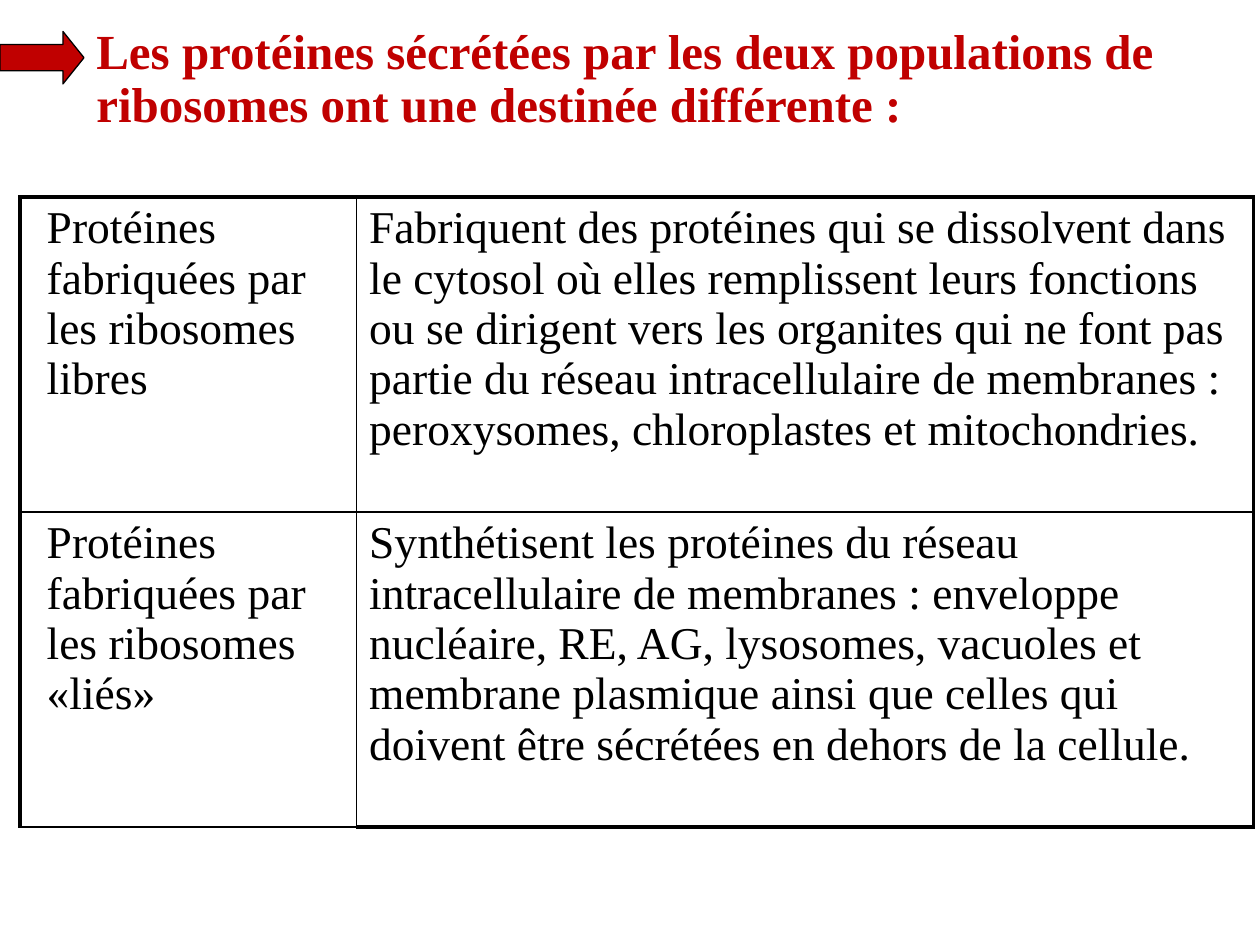
"""Build a slide comparing the fate of proteins made by free and bound ribosomes."""
from dataclasses import dataclass

from lxml import etree
from pptx import Presentation
from pptx import util as u
from pptx.dml.color import RGBColor
from pptx.enum import shapes, text
from pptx.oxml import ns


@dataclass(frozen=True)
class Theme:
    font: str = "Times New Roman"
    red: str = "C00000"
    black: str = "000000"
    title_size: float = 28
    body_size: float = 26
    thick: float = 2.25
    thin: float = 1


theme = Theme()


def add_run(paragraph, words, size, color, bold=False):
    run = paragraph.add_run()
    run.text = words
    run.font.name = theme.font
    run.font.size = u.Pt(size)
    run.font.bold = bold
    run.font.color.rgb = RGBColor.from_string(color)


def add_border(cell, side, width):
    properties = cell._tc.get_or_add_tcPr()
    line = etree.SubElement(properties, ns.qn(f"a:ln{side}"), w=str(u.Pt(width)))
    fill = etree.SubElement(line, ns.qn("a:solidFill"))
    etree.SubElement(fill, ns.qn("a:srgbClr"), val=theme.black)


presentation = Presentation()
presentation.slide_width, presentation.slide_height = u.Pt(720), u.Pt(540)
slide = presentation.slides.add_slide(presentation.slide_layouts[6])

arrow = slide.shapes.add_shape(
    shapes.MSO_SHAPE.RIGHT_ARROW, u.Pt(0), u.Pt(18), u.Pt(48), u.Pt(30))
arrow.adjustments[0], arrow.adjustments[1] = 0.5, 0.4
arrow.shadow.inherit = False
arrow.fill.solid()
arrow.fill.fore_color.rgb = RGBColor.from_string(theme.red)
arrow.line.color.rgb = RGBColor.from_string(theme.black)
arrow.line.width = u.Pt(0.75)

title = slide.shapes.add_textbox(u.Pt(48), u.Pt(12), u.Pt(630), u.Pt(68.4))
title.text_frame.word_wrap = True
title.text_frame.auto_size = text.MSO_AUTO_SIZE.SHAPE_TO_FIT_TEXT
paragraph = title.text_frame.paragraphs[0]
paragraph.line_spacing = 0.9
add_run(paragraph,
        "Les protéines sécrétées par les deux populations de ribosomes "
        "ont une destinée différente :",
        theme.title_size, theme.red, bold=True)

rows = [
    ("Protéines fabriquées par les ribosomes libres",
     "Fabriquent des protéines qui se dissolvent dans le cytosol où elles "
     "remplissent leurs fonctions ou se dirigent vers les organites qui ne font "
     "pas partie du réseau intracellulaire de membranes : peroxysomes, "
     "chloroplastes et mitochondries."),
    ("Protéines fabriquées par les ribosomes «liés»",
     "Synthétisent les protéines du réseau intracellulaire de membranes : "
     "enveloppe nucléaire, RE, AG, lysosomes, vacuoles et membrane plasmique "
     "ainsi que celles qui doivent être sécrétées en dehors de la cellule."),
]
column_widths = (192.25, 512.6)
row_height = 180
table = slide.shapes.add_table(
    len(rows), len(column_widths), u.Pt(11.5), u.Pt(112.5),
    u.Pt(sum(column_widths)), u.Pt(row_height * len(rows))).table
table.first_row = table.horz_banding = False
for column, width in zip(table.columns, column_widths):
    column.width = u.Pt(width)

for row_index, row in enumerate(rows):
    table.rows[row_index].height = u.Pt(row_height)
    for column_index, words in enumerate(row):
        cell = table.cell(row_index, column_index)
        first_column, first_row = column_index == 0, row_index == 0
        thick_sides = {
            "L": first_column,
            "R": not first_column,
            "T": first_row,
            "B": not first_row and not first_column,
        }
        for side, is_thick in thick_sides.items():
            add_border(cell, side, theme.thick if is_thick else theme.thin)
        cell.fill.background()
        paragraph = cell.text_frame.paragraphs[0]
        if first_column:
            paragraph._p.get_or_add_pPr().set("marL", str(u.Pt(8)))
        add_run(paragraph, words, theme.body_size, theme.black)

presentation.save("out.pptx")
